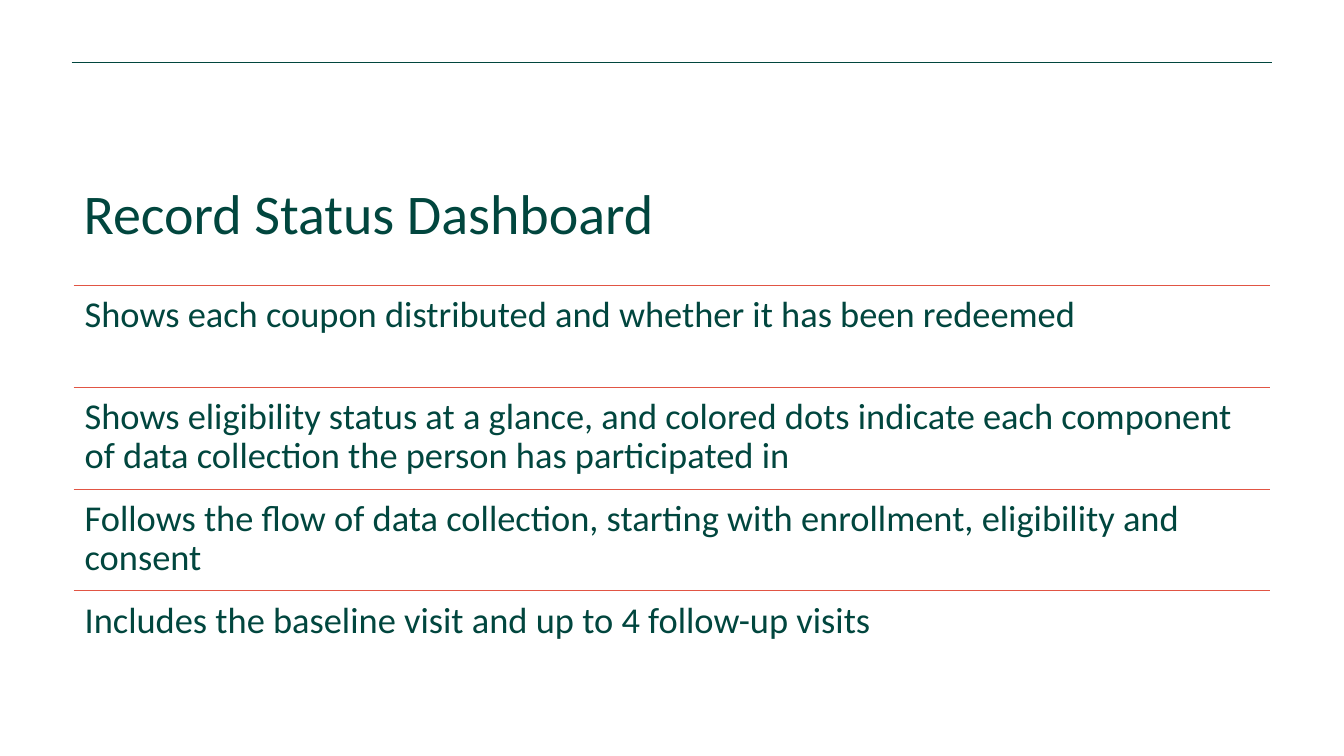
from dataclasses import dataclass

from lxml import etree
from pptx import Presentation
from pptx.dml.color import RGBColor
from pptx.enum import shapes, text
from pptx.oxml import ns
from pptx.util import Inches, Pt

GREEN = RGBColor(0x01, 0x46, 0x3E)
CORAL = RGBColor(0xE1, 0x55, 0x44)
LEFT, TOP, WIDTH, STEP = 0.73, 2.83, 11.87, 1.01
POINTS = (
    "Shows each coupon distributed and whether it has been redeemed",
    "Shows eligibility status at a glance, and colored dots indicate each "
    "component of data collection the person has participated in",
    "Follows the flow of data collection, starting with enrollment, "
    "eligibility and consent",
    "Includes the baseline visit and up to 4 follow-up visits",
)


@dataclass(frozen=True)
class Rule:
    left: float
    right: float
    top: float
    color: RGBColor
    weight: float


@dataclass(frozen=True)
class Label:
    words: str
    size: float
    pitch: float
    inset: dict


def style(item, form: dict) -> None:
    for name, value in form.items():
        setattr(item, name, value)


def draw(slide, rule: Rule) -> None:
    line = slide.shapes.add_connector(
        shapes.MSO_CONNECTOR.STRAIGHT,
        Inches(rule.left), Inches(rule.top),
        Inches(rule.right), Inches(rule.top),
    )
    line.line.color.rgb = rule.color
    line.line.width = Pt(rule.weight)
    etree.SubElement(line._element.spPr, ns.qn("a:effectLst"))


def write(shape, label: Label) -> None:
    frame = shape.text_frame
    style(frame, label.inset)
    frame.text = label.words
    para = frame.paragraphs[0]
    style(para, {
        "alignment": text.PP_ALIGN.LEFT,
        "line_spacing": label.pitch,
        "space_before": Pt(0),
    })
    style(para.runs[0].font, {"name": "Calibri", "size": Pt(label.size)})
    para.runs[0].font.color.rgb = GREEN


def main() -> None:
    deck = Presentation()
    style(deck, {"slide_width": Inches(13.33), "slide_height": Inches(7.5)})
    slide = deck.slides.add_slide(deck.slide_layouts[5])
    base = {"word_wrap": True, "auto_size": text.MSO_AUTO_SIZE.NONE}

    draw(slide, Rule(0.71, 12.62, 0.62, GREEN, 1))
    title = slide.shapes.title
    style(title, {
        "left": Inches(LEFT), "top": Inches(1.38),
        "width": Inches(11.89), "height": Inches(1.1),
    })
    low = {**base, "vertical_anchor": text.MSO_ANCHOR.BOTTOM}
    write(title, Label("Record Status Dashboard", 40, 0.8, low))

    sides = ("left", "top", "right", "bottom")
    pad = {f"margin_{side}": Inches(0.11) for side in sides}
    high = {**base, **pad, "vertical_anchor": text.MSO_ANCHOR.TOP}
    for row, words in enumerate(POINTS):
        top = TOP + row * STEP
        draw(slide, Rule(LEFT, LEFT + WIDTH, top, CORAL, 0.5))
        box = slide.shapes.add_textbox(
            Inches(LEFT), Inches(top), Inches(WIDTH), Inches(STEP)
        )
        write(box, Label(words, 26, 0.9, high))

    deck.save("out.pptx")


if __name__ == "__main__":
    main()
